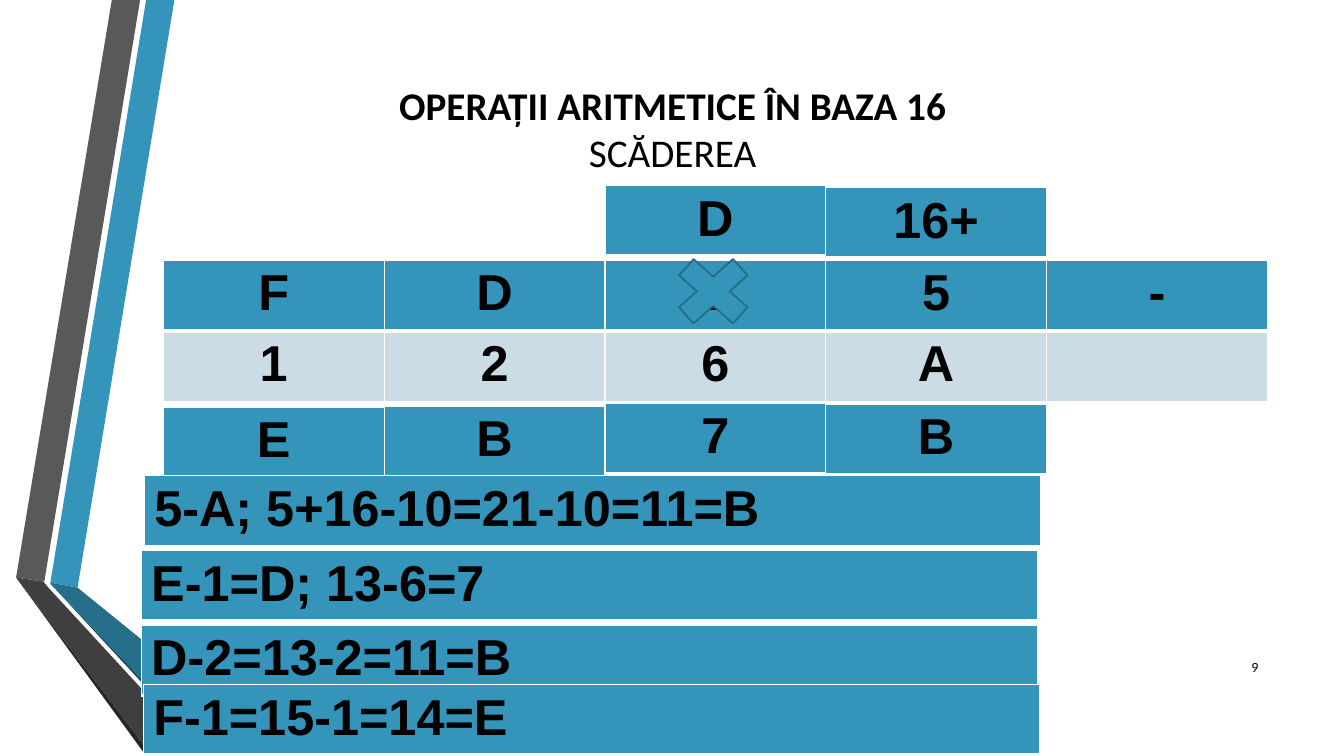
import pptx
import pptx.util
import pptx.dml.color
import pptx.enum.shapes
import pptx.enum.text
from lxml import etree
from pptx.oxml.ns import qn

RGBColor = pptx.dml.color.RGBColor
Inches = pptx.util.Inches
Pt = pptx.util.Pt
ALIGN = pptx.enum.text.PP_ALIGN
MIDDLE = pptx.enum.text.MSO_ANCHOR.MIDDLE

BLUE = RGBColor(0x34, 0x94, 0xBA)
DEEP_BLUE = RGBColor(0x26, 0x6F, 0x8B)
DARK_BLUE = RGBColor(0x19, 0x4A, 0x5D)
CROSS_EDGE = RGBColor(0x25, 0x6C, 0x87)
PALE = RGBColor(0xCC, 0xDC, 0xE6)
GREY = RGBColor(0x59, 0x59, 0x59)
DEEP_GREY = RGBColor(0x3F, 0x3F, 0x3F)
DARK_GREY = RGBColor(0x26, 0x26, 0x26)
BLACK = RGBColor(0, 0, 0)

# Digit grid, in inches
GRID_LEFT = 1.62
COLUMN = 2.19
ROW = 0.65
STEP_WIDTH = 8.89

# Ribbon outlines, in hundredths of an inch
RIBBONS = [
    (BLUE, [(50, 578), (77, 583), (173, 0), (145, 0)]),
    (GREY, [(139, 0), (111, 0), (16, 573), (44, 577)]),
    (DARK_GREY, [(16, 573), (145, 750), (151, 750)]),
    (DARK_BLUE, [(50, 579), (208, 750), (214, 750)]),
    (DEEP_BLUE, [(50, 579), (214, 750), (283, 750), (77, 583), (50, 578)]),
    (DEEP_GREY, [(202, 750), (48, 583), (43, 577), (16, 573), (151, 750)]),
]

OPERANDS = [["F", "D", "E", "5", "-"], ["1", "2", "6", "A", ""]]

# Digit, grid column, top
RESULT = [("B", 3, 4.01), ("7", 2, 4.0), ("B", 1, 4.03), ("E", 0, 4.04)]
BORROWS = [("16+", 3, 1.86), ("D", 2, 1.84)]

# Working, left, top
STEPS = [
    ("5-A; 5+16-10=21-10=11=B", 1.43, 4.72),
    ("E-1=D; 13-6=7", 1.4, 5.46),
    ("D-2=13-2=11=B", 1.4, 6.2),
    ("F-1=15-1=14=E", 1.42, 6.79),
]


def style_runs(paragraph, font_name, size, bold):
    for run in paragraph.runs:
        run.font.name = font_name
        run.font.size = Pt(size)
        run.font.bold = bold
        run.font.color.rgb = BLACK


def add_ribbon(slide, color, points):
    builder = slide.shapes.build_freeform(*points[0], scale=9144)
    builder.add_line_segments(points[1:], close=True)
    ribbon = builder.convert_to_shape()
    ribbon.fill.solid()
    ribbon.fill.fore_color.rgb = color
    ribbon.line.fill.background()
    ribbon.shadow.inherit = False


def add_borders(cell, bottom_width):
    properties = cell._tc.get_or_add_tcPr()
    widths = [("a:lnL", 1), ("a:lnR", 1), ("a:lnT", 1), ("a:lnB", bottom_width)]
    for index, (side, width) in enumerate(widths):
        border = etree.Element(qn(side), w=str(Pt(width)))
        fill = etree.SubElement(border, qn("a:solidFill"))
        etree.SubElement(fill, qn("a:srgbClr"), val="FFFFFF")
        properties.insert(index, border)


def add_digits(slide, rows, left, top, column=COLUMN, align=ALIGN.CENTER):
    count = len(rows[0])
    table = slide.shapes.add_table(
        len(rows), count, Inches(left), Inches(top),
        Inches(column * count), Inches(ROW * len(rows))).table
    for row_index, row in enumerate(rows):
        for column_index, digit in enumerate(row):
            cell = table.cell(row_index, column_index)
            cell.fill.solid()
            cell.fill.fore_color.rgb = PALE if row_index else BLUE
            add_borders(cell, 1 if row_index else 3)
            cell.text_frame.text = digit
            paragraph = cell.text_frame.paragraphs[0]
            paragraph.alignment = align
            style_runs(paragraph, "Arial", 36, True)


def add_title(slide):
    title = slide.shapes.title
    title.left, title.top = Inches(0.92), Inches(0.55)
    title.width, title.height = Inches(11.5), Inches(1.45)
    frame = title.text_frame
    frame.text = "OPERAȚII ARITMETICE ÎN BAZA 16\vSCĂDEREA"
    frame.auto_size = pptx.enum.text.MSO_AUTO_SIZE.NONE
    frame.vertical_anchor = MIDDLE
    heading = frame.paragraphs[0]
    heading.alignment = ALIGN.CENTER
    style_runs(heading, "Calibri", 28, True)
    heading.runs[1].font.bold = False


def add_page_number(slide):
    page = slide.shapes.add_textbox(
        Inches(11.98), Inches(6.42), Inches(0.6), Inches(0.4))
    frame = page.text_frame
    frame.word_wrap = True
    frame.vertical_anchor = MIDDLE
    frame.text = "9"
    frame.paragraphs[0].alignment = ALIGN.RIGHT
    style_runs(frame.paragraphs[0], "Calibri", 10, False)


def add_cross(slide):
    cross = slide.shapes.add_shape(
        pptx.enum.shapes.MSO_SHAPE.MATH_MULTIPLY,
        Inches(6.56), Inches(2.43), Inches(1.03), Inches(0.92))
    cross.adjustments[0] = 0.235
    cross.fill.solid()
    cross.fill.fore_color.rgb = BLUE
    cross.line.color.rgb = CROSS_EDGE
    cross.line.width = Pt(1.25)
    cross.shadow.inherit = False


def main():
    deck = pptx.Presentation()
    deck.slide_width, deck.slide_height = Inches(13.33), Inches(7.5)
    slide = deck.slides.add_slide(deck.slide_layouts.get_by_name("Title Only"))

    # Side ribbons and heading
    for color, points in RIBBONS:
        add_ribbon(slide, color, points)
    add_title(slide)
    add_page_number(slide)

    # Subtraction: operands, result digits and borrows
    add_digits(slide, OPERANDS, GRID_LEFT, 2.58)
    for digit, column, top in RESULT + BORROWS:
        add_digits(slide, [[digit]], GRID_LEFT + column * COLUMN, top)

    # Working for each digit
    for working, left, top in STEPS:
        add_digits(slide, [[working]], left, top, STEP_WIDTH, ALIGN.LEFT)

    # Cross over the borrowed digit
    add_cross(slide)
    deck.save("out.pptx")


if __name__ == "__main__":
    main()
